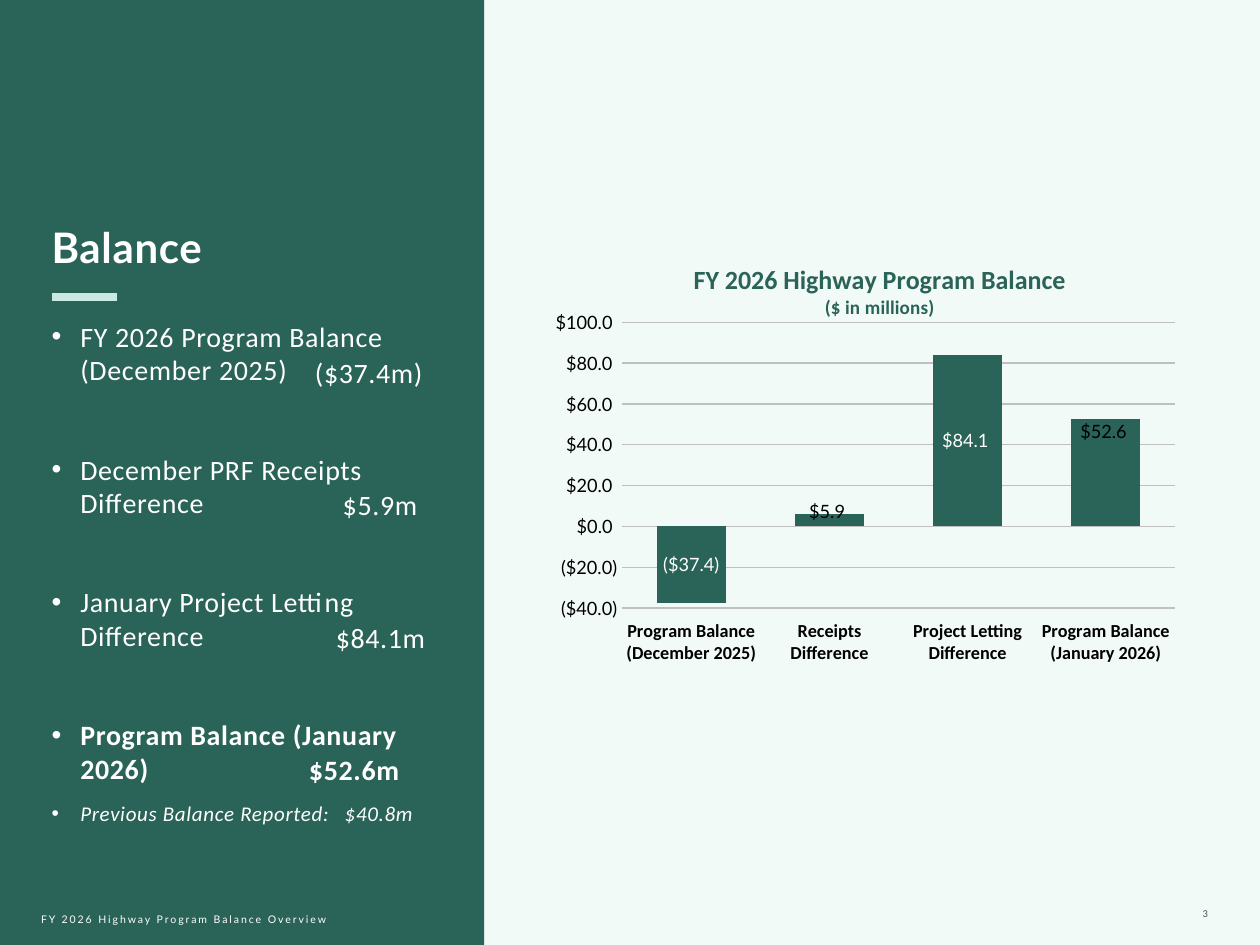
from lxml.etree import SubElement
from pptx import Presentation
from pptx.chart.data import CategoryChartData
from pptx.dml.color import RGBColor
from pptx.enum.chart import XL_CHART_TYPE, XL_LABEL_POSITION, XL_TICK_LABEL_POSITION, XL_TICK_MARK
from pptx.enum.shapes import MSO_CONNECTOR, MSO_SHAPE
from pptx.enum.text import MSO_ANCHOR, PP_ALIGN
from pptx.oxml import parse_xml
from pptx.oxml.ns import nsdecls, qn
from pptx.util import Cm, Pt

GREEN = RGBColor(0x2A, 0x63, 0x57)
MINT = RGBColor(0xCB, 0xE9, 0xE3)
PALE = RGBColor(0xF2, 0xFA, 0xF8)
WHITE = RGBColor(0xFF, 0xFF, 0xFF)
BLACK = RGBColor(0, 0, 0)
GRAY = RGBColor(0x4D, 0x4D, 0x4F)
SILVER = RGBColor(0xBF, 0xBF, 0xBF)
MONEY = '"$"#,##0.0_);\\("$"#,##0.0\\)'


def style(font, color, **values):
    font.color.rgb = color
    for name, value in values.items():
        setattr(font, name, value)


def write(para, text, color, spacing=40, **values):
    """Add a run; spacing is in hundredths of a point."""
    run = para.add_run()
    run.text = text
    style(run.font, color, **values)
    run.font._element.set("spc", str(spacing))


deck = Presentation()
deck.slide_width, deck.slide_height = Cm(25.4), Cm(19.05)
slide = deck.slides.add_slide(deck.slide_layouts[6])
slide.background.fill.solid()
slide.background.fill.fore_color.rgb = PALE
shapes = slide.shapes

# Left panel
panel = shapes.add_shape(MSO_SHAPE.RECTANGLE, 0, 0, Cm(9.76), deck.slide_height)
panel.shadow.inherit = False
panel.fill.solid()
panel.fill.fore_color.rgb = GREEN
panel.line.fill.background()

# Balance chart
data = CategoryChartData(number_format=MONEY)
data.categories = [
    "Program Balance (December 2025)", "Receipts Difference",
    "Project Letting Difference", "Program Balance (January 2026)",
]
data.add_series("Series 1", (-37.4, 5.9, 84.1, 52.6))
chart = shapes.add_chart(
    XL_CHART_TYPE.COLUMN_CLUSTERED, Cm(11.2), Cm(5.21), Cm(12.5), Cm(8.89), data
).chart
chart.has_legend = False
style(chart.font, BLACK, name="Lato", size=Pt(10))

frame = chart.chart_title.text_frame
heads = [("FY 2026 Highway Program Balance", 15), ("($ in millions)", 11)]
for i, (text, size) in enumerate(heads):
    para = frame.add_paragraph() if i else frame.paragraphs[0]
    write(para, text, GREEN, 0, name="Calibri", size=Pt(size), bold=True)
chart.chart_title.include_in_layout = True

places = [
    (chart.chart_title._element, {"x": 0.21, "y": 0}),
    (chart._chartSpace.chart.plotArea, {"x": 0.1, "y": 0.145, "w": 0.9, "h": 0.648}),
]
for part, place in places:
    for old in part.findall(qn("c:layout")):
        part.remove(old)
    layout = parse_xml(f"<c:layout {nsdecls('c')}/>")
    manual = SubElement(layout, qn("c:manualLayout"))
    if "w" in place:
        SubElement(manual, qn("c:layoutTarget")).set("val", "inner")
    for key in ("x", "y"):
        SubElement(manual, qn(f"c:{key}Mode")).set("val", "edge")
    for key, value in place.items():
        SubElement(manual, qn(f"c:{key}")).set("val", str(value))
    texts = part.find(qn("c:tx"))
    part.insert(0 if texts is None else 1, layout)

cats, vals = chart.category_axis, chart.value_axis
for axis in (cats, vals):
    axis.major_tick_mark = axis.minor_tick_mark = XL_TICK_MARK.NONE
cats.tick_label_position = XL_TICK_LABEL_POSITION.LOW
style(cats.tick_labels.font, BLACK, name="Calibri", size=Pt(10.5), bold=True)
style(vals.tick_labels.font, BLACK, name="Lato", size=Pt(10.5), bold=False)
vals.minimum_scale, vals.maximum_scale, vals.major_unit = -40, 100, 20
vals.tick_labels.number_format = MONEY
vals.tick_labels.number_format_is_linked = False
vals.format.line.fill.background()
for line in (cats.format.line, vals.major_gridlines.format.line):
    line.color.rgb = SILVER
    line.width = Pt(0.75)

plot = chart.plots[0]
plot.gap_width, plot.overlap = 100, -24
plot.vary_by_categories = False
bars = plot.series[0]
bars.invert_if_negative = False
bars.format.fill.solid()
bars.format.fill.fore_color.rgb = GREEN
labels = bars.data_labels
labels.show_value = True
labels.number_format = MONEY
labels.number_format_is_linked = False
labels.position = XL_LABEL_POSITION.CENTER
style(labels.font, BLACK, name="Lato", size=Pt(10.5))
spots = [
    (WHITE, XL_LABEL_POSITION.CENTER, 0),
    (BLACK, XL_LABEL_POSITION.CENTER, -0.02),
    (WHITE, XL_LABEL_POSITION.CENTER, 0),
    (BLACK, XL_LABEL_POSITION.INSIDE_END, -0.01),
]
for i, (color, spot, lift) in enumerate(spots):
    label = bars.points[i].data_label
    style(label.font, color, name="Lato", size=Pt(10.5))
    label.position = spot
    if lift:
        item = labels._element.findall(qn("c:dLbl"))[i]
        item.insert(1, parse_xml(
            f'<c:layout {nsdecls("c")}><c:manualLayout><c:x val="0"/>'
            f'<c:y val="{lift}"/></c:manualLayout></c:layout>'))

# Balance list, with each amount set beside the last line of its entry
box = shapes.add_textbox(Cm(1.04), Cm(4.47), Cm(7.92), Cm(12.27))
body = box.text_frame
body.word_wrap = True
body.margin_left = body.margin_right = body.margin_top = body.margin_bottom = 0
head = body.paragraphs[0]
head.space_after = Pt(18)
write(head, "Balance", WHITE, name="Lato", size=Pt(24), bold=True)

INDENT = Cm(0.58)
TOP, STEP = 7.16, 2.67
plain = {"name": "Calibri", "size": Pt(16), "bold": False}
strong = {**plain, "bold": True}
small = {**plain, "size": Pt(12), "italic": True}
rows = [
    ("FY 2026 Program Balance (December 2025)", "($37.4m)", 6.35, TOP, 9, plain),
    ("December PRF Receipts Difference", "$5.9m", 6.91, TOP + STEP, 37.5, plain),
    ("January Project Letting Difference", "$84.1m", 6.77, TOP + 2 * STEP, 37.5, plain),
    ("Program Balance (January 2026)", "$52.6m", 6.23, TOP + 3 * STEP, 37.5, strong),
    ("Previous Balance Reported:", "$40.8m", 6.95, 16.13, 9, small),
]
for text, amount, left, top, gap, look in rows:
    para = body.add_paragraph()
    para.space_before = Pt(gap)
    props = para._p.get_or_add_pPr()
    props.set("marL", str(INDENT))
    props.set("indent", str(-INDENT))
    SubElement(props, qn("a:buFont")).set("typeface", "Arial")
    SubElement(props, qn("a:buChar")).set("char", "•")
    write(para, text, WHITE, **look)
    sum_box = shapes.add_textbox(Cm(left), Cm(top), Cm(2.6), Cm(0.69)).text_frame
    sum_box.word_wrap = True
    sum_box.margin_left = sum_box.margin_right = 0
    sum_box.margin_top = sum_box.margin_bottom = 0
    write(sum_box.paragraphs[0], amount, WHITE, **look)

# Accent line under the heading
rule = shapes.add_connector(MSO_CONNECTOR.STRAIGHT, Cm(1.04), Cm(5.99), Cm(2.36), Cm(5.99))
rule.line.color.rgb = MINT
rule.line.width = Pt(4.5)
SubElement(rule._element.spPr, qn("a:effectLst"))

# Footer and page number
notes = [
    ("FY 2026 Highway Program Balance Overview", (0.83, 18.16, 7.63, 0.76),
     "Lato", WHITE, PP_ALIGN.LEFT, MSO_ANCHOR.MIDDLE),
    ("3", (21.89, 17.65, 2.46, 1.02), "Calibri", GRAY, PP_ALIGN.RIGHT, MSO_ANCHOR.BOTTOM),
]
for text, place, face, color, align, anchor in notes:
    frame = shapes.add_textbox(*map(Cm, place)).text_frame
    frame.word_wrap = True
    frame.margin_left = frame.margin_right = 0
    frame.vertical_anchor = anchor
    frame.paragraphs[0].alignment = align
    write(frame.paragraphs[0], text, color, 110, name=face, size=Pt(6))

deck.save("out.pptx")
